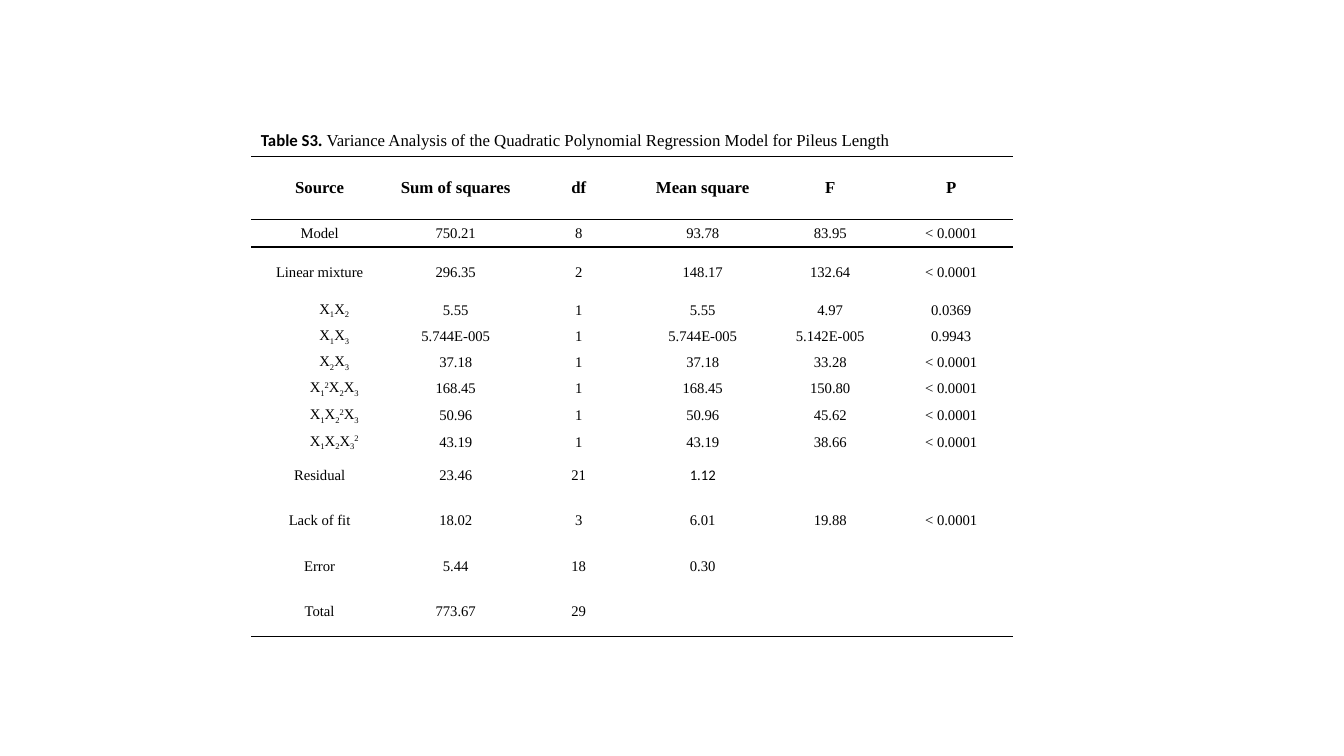
from lxml import etree
from pptx import Presentation, util as u
from pptx.dml.color import RGBColor
from pptx.enum import text
from pptx.oxml.ns import qn

SERIF, SANS, INK = "Times New Roman", "Calibri", "000000"
NO_GRID_STYLE = "{2D5ABB26-0587-4C30-8999-92F81FD0307C}"

CAPTION = [
    ("Table S3", SANS, True),
    (". ", SERIF, True),
    ("Variance Analysis of the Quadratic Polynomial Regression Model for Pileus Length", SERIF, False),
]
# In the first column, _ lowers and ^ raises the digit that follows.
ROWS = [
    ("Source", "Sum of squares", "df", "Mean square", "F", "P"),
    ("Model", "750.21", "8", "93.78", "83.95", "< 0.0001"),
    ("Linear mixture", "296.35", "2", "148.17", "132.64", "< 0.0001"),
    ("X_1X_2", "5.55", "1", "5.55", "4.97", "0.0369"),
    ("X_1X_3", "5.744E-005", "1", "5.744E-005", "5.142E-005", "0.9943"),
    ("X_2X_3", "37.18", "1", "37.18", "33.28", "< 0.0001"),
    ("X_1^2X_2X_3", "168.45", "1", "168.45", "150.80", "< 0.0001"),
    ("X_1X_2^2X_3", "50.96", "1", "50.96", "45.62", "< 0.0001"),
    ("X_1X_2X_3^2", "43.19", "1", "43.19", "38.66", "< 0.0001"),
    ("Residual", "23.46", "21", "1.12", "", ""),
    ("Lack of fit", "18.02", "3", "6.01", "19.88", "< 0.0001"),
    ("Error", "5.44", "18", "0.30", "", ""),
    ("Total", "773.67", "29", "", "", ""),
]
SANS_VALUES = {"1.12"}
LEFT, TOP = 2.49, 1.55
COLUMN_WIDTHS = [1.36, 1.34, 1.1, 1.36, 1.17, 1.23]
ROW_HEIGHTS = [0.63, 0.27, 0.5] + [0.26] * 4 + [0.27, 0.26] + [0.4, 0.5] * 2
TERM_INDENT, CELL_MARGIN = 0.29, 0.01
BASELINES = {"_": "-25000", "^": "30000"}


def color(value):
    return RGBColor.from_string(value)


def add_span(para, words, size, face=SERIF, bold=False):
    span = para.add_run()
    span.text = words
    span.font.size, span.font.name, span.font.bold = u.Pt(size), face, bold
    span.font.color.rgb = color(INK)
    return span


def add_term(para, term, size):
    """Write a model term, turning _ and ^ marks into shifted digits."""
    shift = None
    for letter in term:
        if letter in BASELINES:
            shift = BASELINES[letter]
            continue
        span = add_span(para, letter, size)
        if shift:
            span.font._element.set("baseline", shift)
        shift = None


def add_rule(cell, side):
    props = cell._tc.get_or_add_tcPr()
    line = etree.SubElement(props, qn("a:" + side), w=str(u.Pt(1)))
    fill = etree.SubElement(line, qn("a:solidFill"))
    etree.SubElement(fill, qn("a:srgbClr"), val=INK)


def fill_cell(cell, words, row):
    if row <= 1:
        add_rule(cell, "lnT")
    if row in (0, len(ROWS) - 1):
        add_rule(cell, "lnB")
    cell.fill.background()
    cell.vertical_anchor = text.MSO_ANCHOR.MIDDLE
    cell.margin_left = cell.margin_right = u.Inches(CELL_MARGIN)
    cell.margin_top = cell.margin_bottom = u.Inches(CELL_MARGIN)
    para = cell.text_frame.paragraphs[0]
    para.alignment = text.PP_ALIGN.CENTER
    size = 12 if row == 0 else 10.5
    if "_" in words:
        props = para._p.get_or_add_pPr()
        props.set("marL", "0")
        props.set("indent", str(u.Inches(TERM_INDENT)))
        add_term(para, words, size)
    elif words:
        add_span(para, words, size, SANS if words in SANS_VALUES else SERIF, row == 0)


def add_caption(page):
    box = page.shapes.add_textbox(u.Inches(LEFT), u.Inches(1.24), u.Inches(9.37), u.Inches(0.3))
    box.text_frame.word_wrap = True
    box.text_frame.auto_size = text.MSO_AUTO_SIZE.SHAPE_TO_FIT_TEXT
    para = box.text_frame.paragraphs[0]
    para.alignment = text.PP_ALIGN.JUSTIFY
    for words, face, bold in CAPTION:
        add_span(para, words, 12, face, bold)


def add_variance_table(page):
    frame = page.shapes.add_table(
        len(ROWS), len(COLUMN_WIDTHS), u.Inches(LEFT), u.Inches(TOP),
        u.Inches(sum(COLUMN_WIDTHS)), u.Inches(sum(ROW_HEIGHTS)))
    table = frame.table
    table.first_row = table.horz_banding = False
    for style in frame._element.iter(qn("a:tableStyleId")):
        style.text = NO_GRID_STYLE
    for column, width in zip(table.columns, COLUMN_WIDTHS):
        column.width = u.Inches(width)
    for row, (values, height) in enumerate(zip(ROWS, ROW_HEIGHTS)):
        table.rows[row].height = u.Inches(height)
        for column, words in enumerate(values):
            fill_cell(table.cell(row, column), words, row)


def main():
    deck = Presentation()
    deck.slide_width, deck.slide_height = u.Inches(13.33), u.Inches(7.5)
    page = deck.slides.add_slide(deck.slide_layouts[6])
    add_caption(page)
    add_variance_table(page)
    deck.save("out.pptx")


if __name__ == "__main__":
    main()
